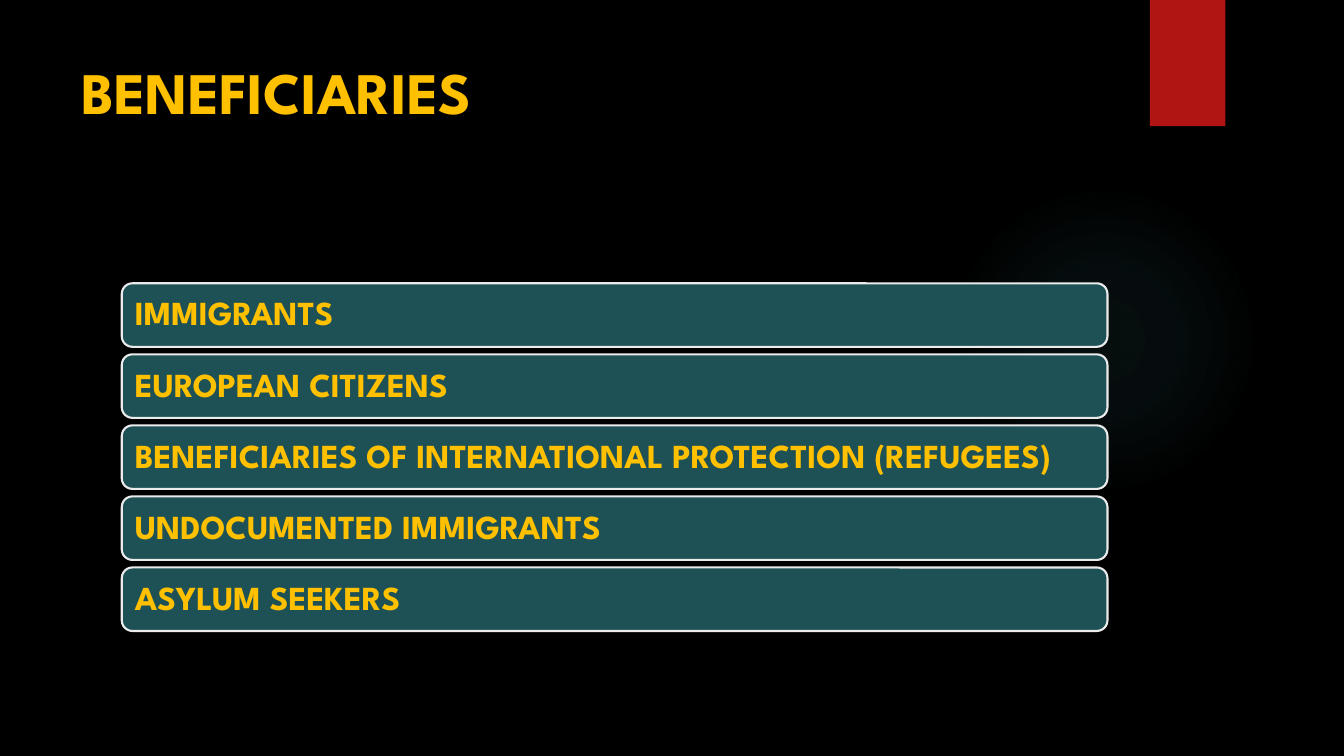
from lxml.etree import SubElement
from pptx import Presentation
from pptx.dml.color import RGBColor
from pptx.enum.shapes import MSO_SHAPE as Preset
from pptx.enum.text import MSO_ANCHOR as Anchor, PP_ALIGN as Align
from pptx.oxml import parse_xml
from pptx.oxml.ns import nsdecls, qn
from pptx.util import Cm, Pt

BLACK = RGBColor(0x00, 0x00, 0x00)
GOLD = RGBColor(0xFF, 0xC0, 0x00)
TEAL = RGBColor(0x1E, 0x51, 0x55)
PALE = RGBColor(0xEB, 0xEB, 0xEB)
RED = RGBColor(0xB0, 0x15, 0x13)
GLOW = RGBColor(0x50, 0xB9, 0xC1)
FONT = "League Spartan"
GLOW_STOPS = [(0, 7), (36, 6), (69, 0)]
BENEFICIARIES = [
    "IMMIGRANTS",
    "EUROPEAN CITIZENS",
    "BENEFICIARIES OF INTERNATIONAL PROTECTION (REFUGEES)",
    "UNDOCUMENTED IMMIGRANTS",
    "ASYLUM SEEKERS",
]


def style_text(paragraph, size):
    paragraph.alignment = Align.LEFT
    font = paragraph.font
    font.name, font.size, font.bold = FONT, Pt(size), True
    font.color.rgb = GOLD


def add_panel(slide, preset, left, top, width, height, color):
    panel = slide.shapes.add_shape(preset, Cm(left), Cm(top), Cm(width), Cm(height))
    panel.shadow.inherit = False
    panel.fill.solid()
    panel.fill.fore_color.rgb = color
    panel.line.fill.background()
    return panel


def add_glow(slide, left, top, size):
    glow = add_panel(slide, Preset.OVAL, left, top, size, size, GLOW)
    gradient = parse_xml(f'<a:gradFill {nsdecls("a")} rotWithShape="1"/>')
    stops = SubElement(gradient, qn("a:gsLst"))
    for position, opacity in GLOW_STOPS:
        stop = SubElement(stops, qn("a:gs"), pos=str(position * 1000))
        color = SubElement(stop, qn("a:srgbClr"), val=str(GLOW))
        SubElement(color, qn("a:alpha"), val=str(opacity * 1000))
    circle = SubElement(gradient, qn("a:path"), path="circle")
    SubElement(circle, qn("a:fillToRect"), l="50000", t="50000", r="50000", b="50000")
    properties = glow.element.spPr
    properties.replace(properties.find(qn("a:solidFill")), gradient)


def add_title(slide, left, top, width, height):
    title = slide.shapes.title
    title.left, title.top = Cm(left), Cm(top)
    title.width, title.height = Cm(width), Cm(height)
    frame = title.text_frame
    frame.text = "BENEFICIARIES"
    frame.vertical_anchor = Anchor.TOP
    style_text(frame.paragraphs[0], 42)


def add_beneficiaries(slide, left, top, width, bar_height, pitch):
    for row, beneficiary in enumerate(BENEFICIARIES):
        bar = add_panel(slide, Preset.ROUNDED_RECTANGLE, left, top + row * pitch,
                        width, bar_height, TEAL)
        bar.line.color.rgb = PALE
        bar.line.width = Pt(1.5)
        frame = bar.text_frame
        frame.word_wrap = True
        frame.vertical_anchor = Anchor.MIDDLE
        frame.margin_left = frame.margin_right = Cm(0.25)
        frame.margin_top = frame.margin_bottom = Cm(0.25)
        frame.text = beneficiary
        paragraph = frame.paragraphs[0]
        paragraph.line_spacing = 0.9
        style_text(paragraph, 24)


def main():
    presentation = Presentation()
    presentation.slide_width, presentation.slide_height = Cm(33.87), Cm(19.05)
    slide = presentation.slides.add_slide(presentation.slide_layouts[5])
    slide.background.fill.solid()
    slide.background.fill.fore_color.rgb = BLACK
    add_glow(slide, 23.9, 4.65, 7.82)
    add_panel(slide, Preset.RECTANGLE, 28.98, 0, 1.9, 3.18, RED)
    add_title(slide, 1.8, 1.27, 26.14, 3.89)
    add_beneficiaries(slide, 3.07, 7.14, 24.84, 1.6, 1.79)
    presentation.save("out.pptx")


if __name__ == "__main__":
    main()
